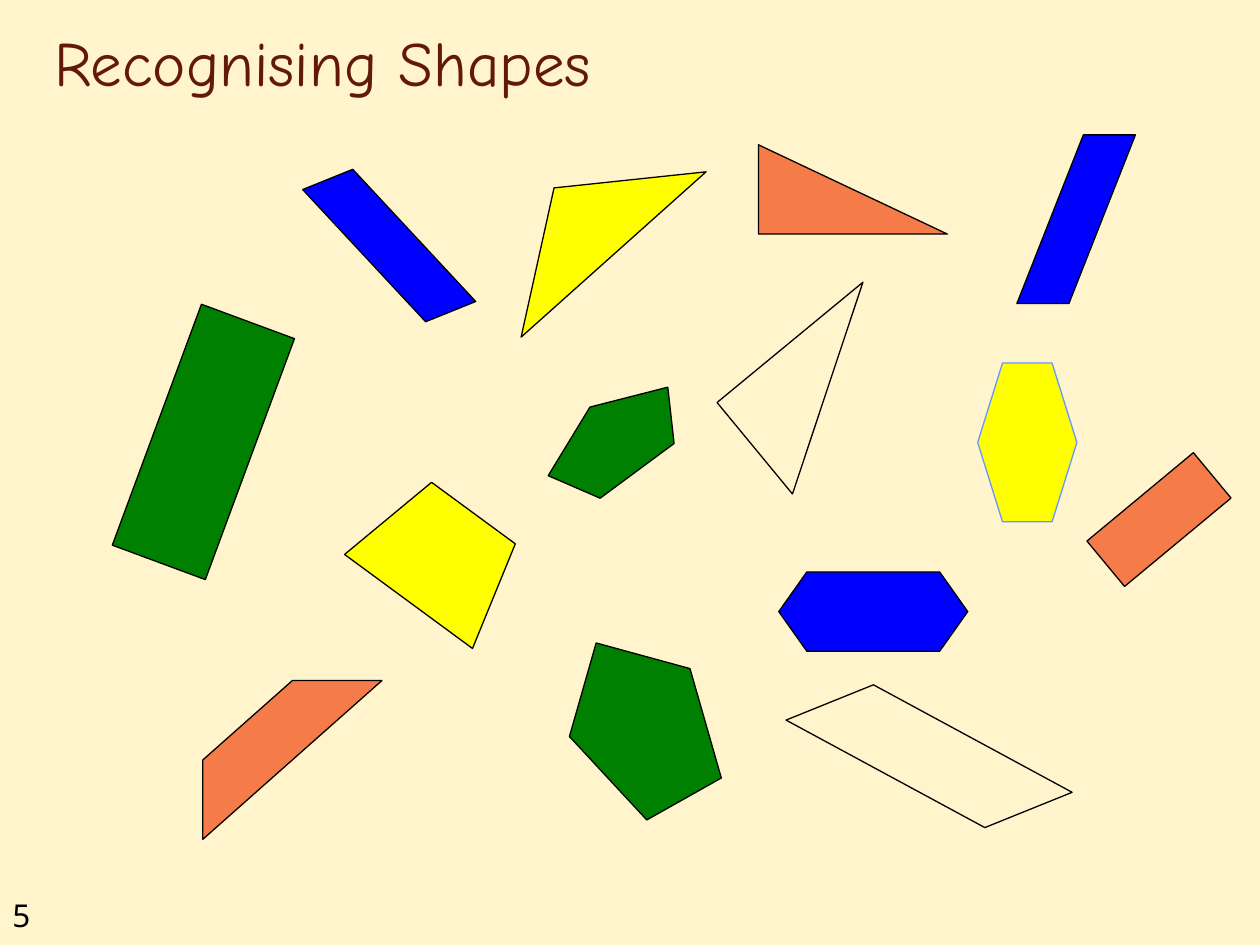
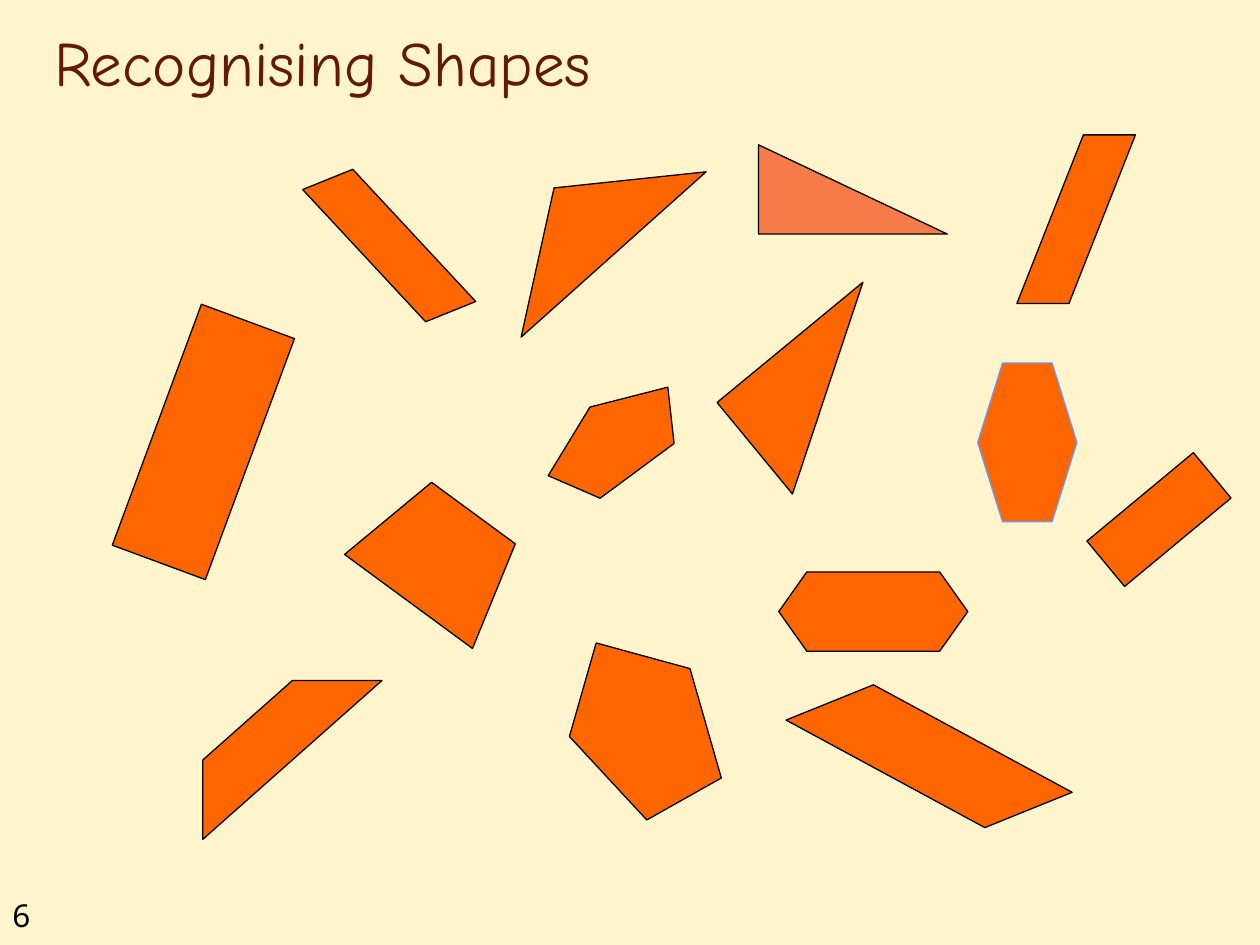
from dataclasses import dataclass

from lxml.etree import SubElement
from pptx import Presentation
from pptx.dml.color import RGBColor
from pptx.enum.shapes import MSO_SHAPE
from pptx.enum.text import MSO_ANCHOR, PP_ALIGN
from pptx.oxml.ns import qn
from pptx.util import Cm, Pt

CREAM = RGBColor(0xFF, 0xF2, 0xC0)
BROWN = RGBColor(0x63, 0x19, 0x08)
BLACK = RGBColor(0x00, 0x00, 0x00)
CORAL = RGBColor(0xF5, 0x7B, 0x49)
GREEN = RGBColor(0x00, 0x80, 0x00)
YELLOW = RGBColor(0xFF, 0xFF, 0x00)
BLUE = RGBColor(0x00, 0x00, 0xFF)
SKY = RGBColor(0x66, 0x99, 0xFF)
ORANGE = RGBColor(0xFF, 0x66, 0x00)


@dataclass
class Figure:
    kind: MSO_SHAPE
    frame: tuple
    color: RGBColor = None
    rotation: float = 0
    adjustment: float = None
    flipped: bool = False
    outline: RGBColor = BLACK
    keeps_color: bool = False


TITLE = "Recognising Shapes"
FIGURES = [
    Figure(MSO_SHAPE.RECTANGLE, (21.97, 9.88, 2.79, 1.19), CORAL, 320.3),
    Figure(MSO_SHAPE.RECTANGLE, (3.1, 6.32, 2, 5.18), GREEN, 20.3),
    Figure(MSO_SHAPE.ISOSCELES_TRIANGLE, (9.27, 3.56, 5, 1.8), YELLOW, 318.2),
    Figure(MSO_SHAPE.RIGHT_TRIANGLE, (15.29, 2.92, 3.81, 1.8), CORAL, keeps_color=True),
    Figure(MSO_SHAPE.RIGHT_TRIANGLE, (15.49, 5.92, 2.39, 3.81), rotation=50.5),
    Figure(MSO_SHAPE.TRAPEZOID, (7.29, 10.13, 3.2, 2.21), YELLOW, 36.3),
    Figure(MSO_SHAPE.HEXAGON, (19.71, 7.32, 2, 3.2), YELLOW, outline=SKY),
    Figure(MSO_SHAPE.HEXAGON, (15.7, 11.53, 3.81, 1.6), BLUE, adjustment=0.354),
    Figure(MSO_SHAPE.REGULAR_PENTAGON, (11.51, 12.73, 2.79, 3.61), GREEN, 330.6),
    Figure(MSO_SHAPE.REGULAR_PENTAGON, (10.87, 8.05, 3, 1.6), GREEN, 323.5),
    Figure(MSO_SHAPE.DIAGONAL_STRIPE, (4.09, 13.72, 3.61, 3.2), CORAL),
    Figure(MSO_SHAPE.PARALLELOGRAM, (20.5, 2.72, 2.39, 3.4), BLUE, adjustment=0.561),
    Figure(MSO_SHAPE.PARALLELOGRAM, (6.65, 3.25, 2.39, 3.4), BLUE, 338, 0.544, True),
    Figure(MSO_SHAPE.PARALLELOGRAM, (16.33, 13.49, 4.8, 3.51), None, 338, 0.827, True),
]
PAGES = [("5", None), ("6", ORANGE)]


def write(box, text, *, font, size, color, anchor=MSO_ANCHOR.TOP):
    """Put left-aligned text in a box with the given format."""
    frame = box.text_frame
    frame.word_wrap = True
    frame.vertical_anchor = anchor
    para = frame.paragraphs[0]
    para.alignment = PP_ALIGN.LEFT
    span = para.add_run()
    span.text = text
    span.font.name = font
    span.font.size = Pt(size)
    span.font.color.rgb = color


def paint_background(master):
    """Give every page a slightly transparent cream background."""
    fill = master.background.fill
    fill.solid()
    fill.fore_color.rgb = CREAM
    color = next(master.element.iter(qn("a:srgbClr")))
    SubElement(color, qn("a:alpha"), val="82000")


def draw_figure(page, figure, color):
    """Draw one outlined figure, left unfilled when color is None."""
    shape = page.shapes.add_shape(figure.kind, *map(Cm, figure.frame))
    shape.shadow.inherit = False
    shape.rotation = figure.rotation
    if figure.adjustment is not None:
        shape.adjustments[0] = figure.adjustment
    if figure.flipped:
        shape.element.spPr.xfrm.set("flipH", "1")
    if color is None:
        shape.fill.background()
    else:
        shape.fill.solid()
        shape.fill.fore_color.rgb = color
    shape.line.color.rgb = figure.outline
    shape.line.width = Pt(0.75)


def add_page(deck, number, common_color):
    """Add a page of figures, in one common colour if it is given."""
    page = deck.slides.add_slide(deck.slide_layouts[5])
    title = page.shapes.title
    title.left, title.top, title.width, title.height = map(Cm, (0.84, 0.43, 21.59, 1.7))
    write(title, TITLE, font="Comic Neue", size=36, color=BROWN, anchor=MSO_ANCHOR.BOTTOM)
    box = page.shapes.add_textbox(*map(Cm, (0, 17.93, 1.9, 1.02)))
    write(box, number, font="Noto Sans", size=18, color=BLACK)
    for figure in FIGURES:
        color = figure.color if figure.keeps_color else common_color or figure.color
        draw_figure(page, figure, color)


def main():
    """Build and save the deck."""
    deck = Presentation()
    deck.slide_width, deck.slide_height = Cm(25.4), Cm(19.05)
    paint_background(deck.slide_master)
    for number, common_color in PAGES:
        add_page(deck, number, common_color)
    deck.save("out.pptx")


if __name__ == "__main__":
    main()
